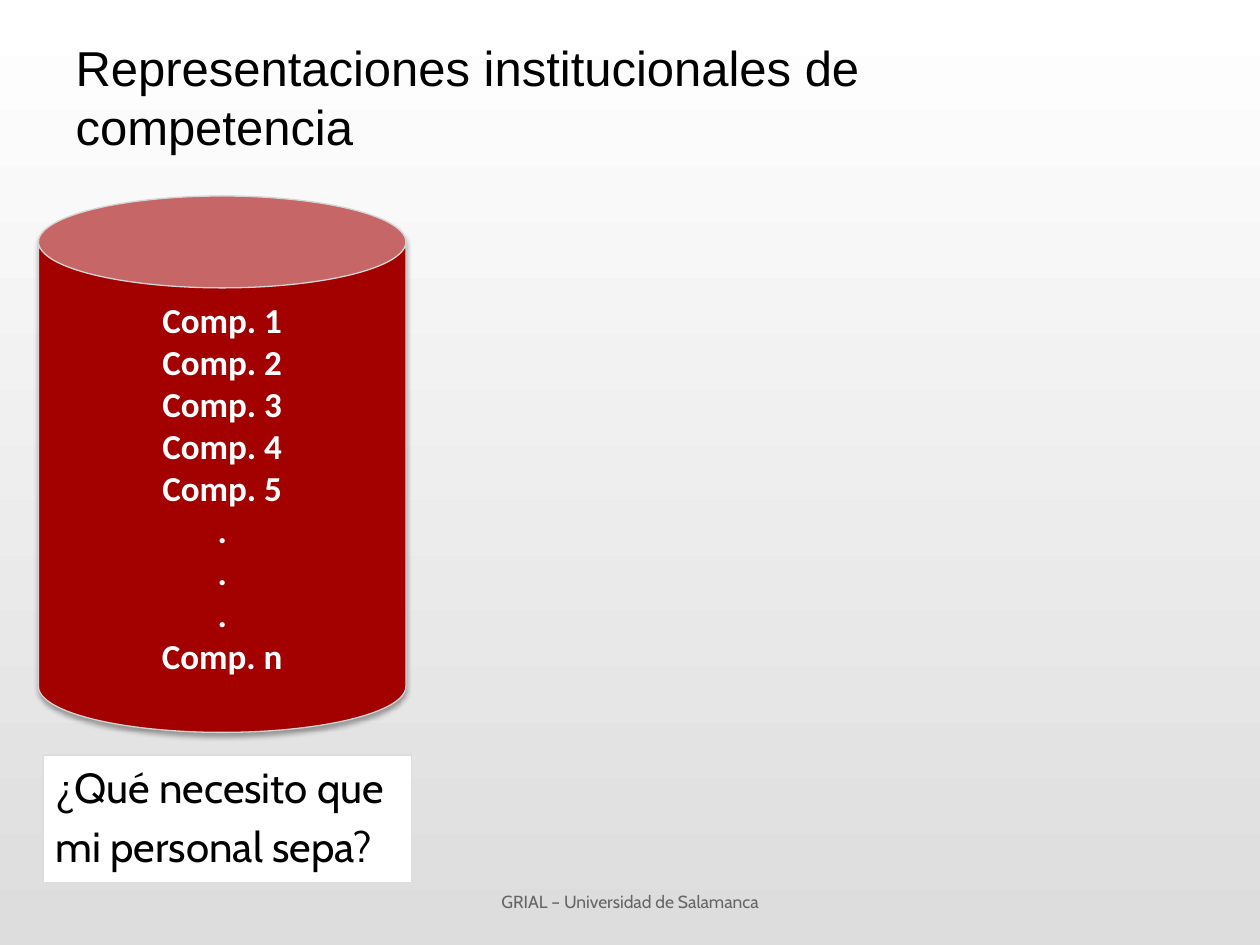
from lxml import etree
from pptx import Presentation
from pptx.dml.color import RGBColor
from pptx.enum.shapes import MSO_SHAPE
from pptx.enum.text import MSO_ANCHOR, MSO_AUTO_SIZE, PP_ALIGN
from pptx.oxml.ns import qn
from pptx.util import Pt

CAN = MSO_SHAPE.CAN
TOP, MIDDLE = MSO_ANCHOR.TOP, MSO_ANCHOR.MIDDLE
LEFT, CENTER = PP_ALIGN.LEFT, PP_ALIGN.CENTER
NO_FIT = MSO_AUTO_SIZE.NONE

BLACK = RGBColor(0x00, 0x00, 0x00)
WHITE = RGBColor(0xFF, 0xFF, 0xFF)
RED = RGBColor(0xA3, 0x00, 0x00)
GRAY = RGBColor(0x66, 0x66, 0x66)
PALE = RGBColor(0xDD, 0xDD, 0xDD)
EDGE = RGBColor(0xD4, 0xD4, 0xD4)


class Deck:
    title_font, text_font, can_font = "Arial", "Cabin", "Calibri"
    line_width = 0.75

    def __init__(self):
        self.prs = Presentation()
        self.prs.slide_width, self.prs.slide_height = Pt(720), Pt(540)
        self.s = self.prs.slides.add_slide(self.prs.slide_layouts[1])

    def background(self, top, bottom):
        fill = self.s.background.fill
        fill.gradient()
        fill.gradient_angle = 270
        for stop, color in zip(fill.gradient_stops, (top, bottom)):
            stop.color.rgb = color

    def place(self, sp, box):
        sp.left, sp.top, sp.width, sp.height = map(Pt, box)

    def paint(self, sp, fill, line):
        sp.fill.solid()
        sp.fill.fore_color.rgb = fill
        sp.line.color.rgb = line
        sp.line.width = Pt(self.line_width)

    def set_text(self, sp, text, font, size, color, align=LEFT, anchor=MIDDLE, bold=False):
        tf = sp.text_frame
        tf.text = text
        tf.word_wrap = True
        tf.auto_size = NO_FIT
        tf.vertical_anchor = anchor
        for p in tf.paragraphs:
            p.alignment = align
            for r in p.runs:
                r.font.name, r.font.size, r.font.bold = font, Pt(size), bold
                r.font.color.rgb = color

    def title(self, text, box):
        sp = self.s.shapes.title
        self.place(sp, box)
        self.set_text(sp, text, self.title_font, 28, BLACK)

    def body(self, lines, box):
        sp = self.s.placeholders[1]
        self.place(sp, box)
        self.paint(sp, WHITE, PALE)
        self.set_text(sp, "\n".join(lines), self.text_font, 24, BLACK, anchor=TOP)
        for i, p in enumerate(sp.text_frame.paragraphs):
            p.space_before = Pt(4.8 if i else 0)
            pPr = p._p.get_or_add_pPr()
            pPr.set("marL", "0")
            pPr.set("indent", "0")
            etree.SubElement(pPr, qn("a:buNone"))

    def label(self, text, box):
        sp = self.s.shapes.add_textbox(*map(Pt, box))
        self.set_text(sp, text, self.text_font, 10, GRAY, CENTER)

    def can(self, lines, box):
        sp = self.s.shapes.add_shape(CAN, *map(Pt, box))
        self.paint(sp, RED, EDGE)
        self.set_text(sp, "\n".join(lines), self.can_font, 20, WHITE, CENTER, bold=True)
        self.shadow(sp)

    def shadow(self, sp):
        sp.shadow.inherit = False
        effects = sp._element.spPr.find(qn("a:effectLst"))
        outer = etree.SubElement(
            effects, qn("a:outerShdw"), blurRad=str(Pt(3.1)), dist=str(Pt(1.8)),
            dir="5400000", rotWithShape="0")
        color = etree.SubElement(outer, qn("a:srgbClr"), val=str(BLACK))
        etree.SubElement(color, qn("a:alpha"), val="35000")


def main():
    deck = Deck()
    deck.background(WHITE, PALE)

    # Title and question
    deck.title("Representaciones institucionales de competencia", (36, 10, 463, 90))
    deck.body(["¿Qué necesito que", "mi personal sepa?"], (24.5, 431.5, 210.5, 73))

    # Footer
    deck.label("GRIAL – Universidad de Salamanca", (246, 500.5, 228, 29))

    # Store of competences
    competences = [f"Comp. {i}" for i in range(1, 6)] + ["."] * 3 + ["Comp. n"]
    deck.can(competences, (22, 112, 210, 306.5))

    deck.prs.save("out.pptx")


if __name__ == "__main__":
    main()
